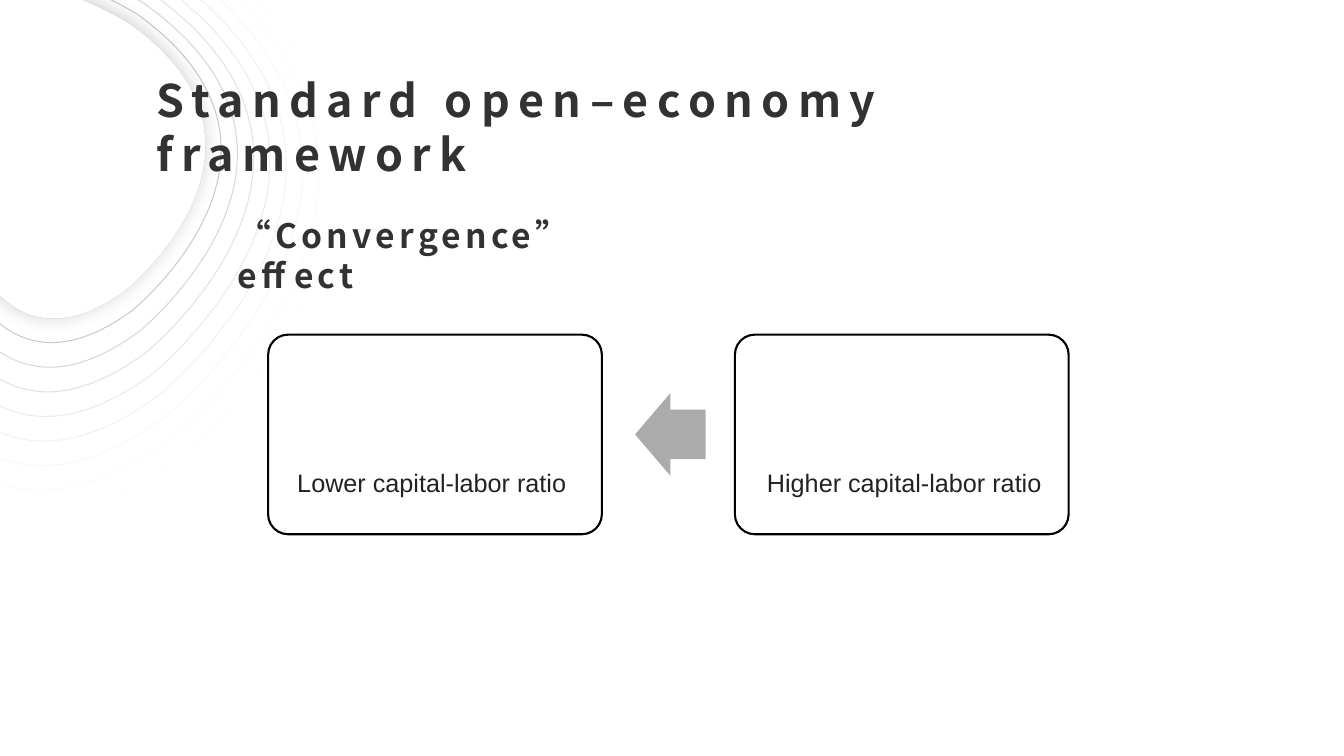
"""Build the slide on the convergence effect in the standard open-economy framework."""
from dataclasses import dataclass
from typing import Optional

from lxml import etree
from pptx import Presentation, util as u
from pptx.dml.color import RGBColor
from pptx.enum import shapes, text
from pptx.oxml import ns


@dataclass(frozen=True)
class Theme:
    heading_font: str = "Noto Sans CJK SC"
    body_font: str = "Arial"
    heading: str = "323232"
    body: str = "222222"
    outline: str = "000000"
    paper: str = "FFFFFF"
    arrow: str = "ABABAB"
    title_size: float = 32
    subtitle_size: float = 24
    label_size: float = 18
    ring_tones: tuple[int, int] = (0xF8, 0xBF)
    ring_line: float = 0.75
    card_line: float = 1.5


@dataclass(frozen=True)
class Box:
    left: float
    top: float
    width: float
    height: float


@dataclass(frozen=True)
class Label:
    wording: str
    box: Box
    size: float
    font: str
    color: str
    bold: bool = False
    tracking: float = 0


@dataclass(frozen=True)
class Block:
    kind: shapes.MSO_SHAPE
    box: Box
    fill: str
    adjustments: tuple[float, ...]
    line: Optional[str] = None
    rotation: float = 0


@dataclass(frozen=True)
class Shadow:
    color: str
    opacity: float
    blur: float
    distance: float = 0
    direction: float = 0


Point = tuple[float, float]
THEME = Theme()
WIDTH, HEIGHT = u.Inches(13.33), u.Inches(7.5)
RING_COUNT = 9
RING_ROTATION = 248.1
CURVE_STEPS = 40
OUTER_RING: list[Point] = [(9.75, -11.73), (-27, -28.53), (-20.03, 19.33),
                           (-10.43, 75.47), (15.45, 46), (51.45, -1.33)]
INNER_RING: list[Point] = [(7.5, 1.33), (-11.25, -7.33), (-7.73, 17.2),
                           (-2.78, 45.73), (10.43, 30.8), (28.8, 6.67)]
RING_SHADOW = Shadow(THEME.heading, 10, 50)
CORE_SHADOW = Shadow(THEME.outline, 20, 15, 3, 225)

CARD = shapes.MSO_SHAPE.ROUNDED_RECTANGLE
BLOCKS = [
    Block(CARD, Box(19.95, 44.27, 24.83, 26.4), THEME.paper, (0.1,), THEME.outline),
    Block(shapes.MSO_SHAPE.RIGHT_ARROW, Box(47.25, 52, 5.25, 10.93), THEME.arrow,
          (0.6, 0.5), rotation=180),
    Block(CARD, Box(54.68, 44.27, 24.83, 26.4), THEME.paper, (0.1,), THEME.outline),
]
LABELS = [
    Label("Standard open–economy framework", Box(10.88, 8.93, 78.3, 8.53),
          THEME.title_size, THEME.heading_font, THEME.heading, True, 6),
    Label("“Convergence” effect", Box(16.95, 27.73, 31.58, 6.67),
          THEME.subtitle_size, THEME.heading_font, THEME.heading, True, 3),
    Label("Lower capital-labor ratio", Box(21.38, 61.2, 22.73, 5.33),
          THEME.label_size, THEME.body_font, THEME.body),
    Label("Higher capital-labor ratio", Box(56.33, 61.2, 22.73, 5.33),
          THEME.label_size, THEME.body_font, THEME.body),
]


def across(share: float) -> int:
    return round(WIDTH * share / 100)


def down(share: float) -> int:
    return round(HEIGHT * share / 100)


def place(box: Box) -> tuple[int, int, int, int]:
    return across(box.left), down(box.top), across(box.width), down(box.height)


def blend(start: float, end: float, share: float) -> float:
    return start + (end - start) * share


def split_arcs(anchors: list[Point]) -> list[tuple[Point, ...]]:
    points = [(across(x), down(y)) for x, y in anchors]
    return [(points[i], points[i + 1], points[(i + 2) % len(points)])
            for i in range(0, len(points), 2)]


def curve_bounds(arcs: list[tuple[Point, ...]]) -> tuple[int, int, int, int]:
    """Bound cubic arcs that each have their first handle on their start."""
    ranges = []
    for axis in (0, 1):
        values = []
        for start, handle, end in arcs:
            for step in range(CURVE_STEPS):
                t = step / CURVE_STEPS
                values.append(start[axis] * ((1 - t) ** 3 + 3 * t * (1 - t) ** 2)
                              + handle[axis] * 3 * t * t * (1 - t) + end[axis] * t ** 3)
        ranges.append((round(min(values)), round(max(values))))
    (left, right), (top, bottom) = ranges
    return left, top, right, bottom


def bend_outline(shape, arcs: list[tuple[Point, ...]]) -> None:
    outline = shape._element.find(".//" + ns.qn("a:path"))
    for segment in list(outline):
        outline.remove(segment)
    commands = [("a:moveTo", (arcs[0][0],))]
    commands += [("a:cubicBezTo", (start, handle, end)) for start, handle, end in arcs]
    for command, points in commands:
        segment = etree.SubElement(outline, ns.qn(command))
        for x, y in points:
            etree.SubElement(segment, ns.qn("a:pt"), x=str(x - shape.left), y=str(y - shape.top))
    etree.SubElement(outline, ns.qn("a:close"))


def set_opacity(color_element, percent: float) -> None:
    etree.SubElement(color_element, ns.qn("a:alpha"), val=str(round(percent * 1000)))


def add_shadow(shape, shadow: Shadow) -> None:
    effects = shape._element.spPr.find(ns.qn("a:effectLst"))
    outer = etree.SubElement(effects, ns.qn("a:outerShdw"), blurRad=str(u.Pt(shadow.blur)),
                             dist=str(u.Pt(shadow.distance)),
                             dir=str(round(shadow.direction * 60000)), rotWithShape="0")
    set_opacity(etree.SubElement(outer, ns.qn("a:srgbClr"), val=shadow.color), shadow.opacity)


def paint(shape, fill: Optional[str], line: Optional[str], width: float) -> None:
    shape.shadow.inherit = False
    for fill_format, color in ((shape.fill, fill), (shape.line.fill, line)):
        if color:
            fill_format.solid()
            fill_format.fore_color.rgb = RGBColor.from_string(color)
        else:
            fill_format.background()
    shape.line.width = u.Pt(width)


def add_ring(group, anchors: list[Point], line: str, opacity: float, shadow: Shadow,
             fill: Optional[str] = None) -> None:
    arcs = split_arcs(anchors)
    left, top, right, bottom = curve_bounds(arcs)
    builder = group.shapes.build_freeform(left, top)
    builder.add_line_segments([(right, top), (right, bottom), (left, bottom)], close=True)
    shape = builder.convert_to_shape()
    bend_outline(shape, arcs)
    shape.rotation = RING_ROTATION
    paint(shape, fill, line, THEME.ring_line)
    set_opacity(shape._element.spPr.find(f"{ns.qn('a:ln')}//{ns.qn('a:srgbClr')}"), opacity)
    add_shadow(shape, shadow)


def add_rings(slide) -> None:
    group = slide.shapes.add_group_shape()
    for index in range(RING_COUNT):
        share = index / (RING_COUNT - 1)
        anchors = [(blend(a[0], b[0], share), blend(a[1], b[1], share))
                   for a, b in zip(OUTER_RING, INNER_RING)]
        tone = f"{round(blend(*THEME.ring_tones, share)):02X}" * 3
        add_ring(group, anchors, tone, 100 * (index + 1) / RING_COUNT, RING_SHADOW)
    add_ring(group, INNER_RING, THEME.paper, 100, CORE_SHADOW, THEME.paper)


def add_block(group, block: Block) -> None:
    shape = group.shapes.add_shape(block.kind, *place(block.box))
    shape.rotation = block.rotation
    for index, value in enumerate(block.adjustments):
        shape.adjustments[index] = value
    paint(shape, block.fill, block.line, THEME.card_line)


def add_label(slide, label: Label) -> None:
    frame = slide.shapes.add_textbox(*place(label.box)).text_frame
    frame.word_wrap, frame.auto_size = True, text.MSO_AUTO_SIZE.SHAPE_TO_FIT_TEXT
    run = frame.paragraphs[0].add_run()
    run.text = label.wording
    run.font.name, run.font.size, run.font.bold = label.font, u.Pt(label.size), label.bold
    run.font.color.rgb = RGBColor.from_string(label.color)
    properties = run._r.get_or_add_rPr()
    properties.set("spc", str(round(label.tracking * 100)))
    etree.SubElement(properties, ns.qn("a:ea"), typeface=label.font)


def main() -> None:
    presentation = Presentation()
    presentation.slide_width, presentation.slide_height = WIDTH, HEIGHT
    slide = presentation.slides.add_slide(presentation.slide_layouts[6])
    add_rings(slide)
    group = slide.shapes.add_group_shape()
    for block in BLOCKS:
        add_block(group, block)
    for label in LABELS:
        add_label(slide, label)
    presentation.save("out.pptx")


if __name__ == "__main__":
    main()
